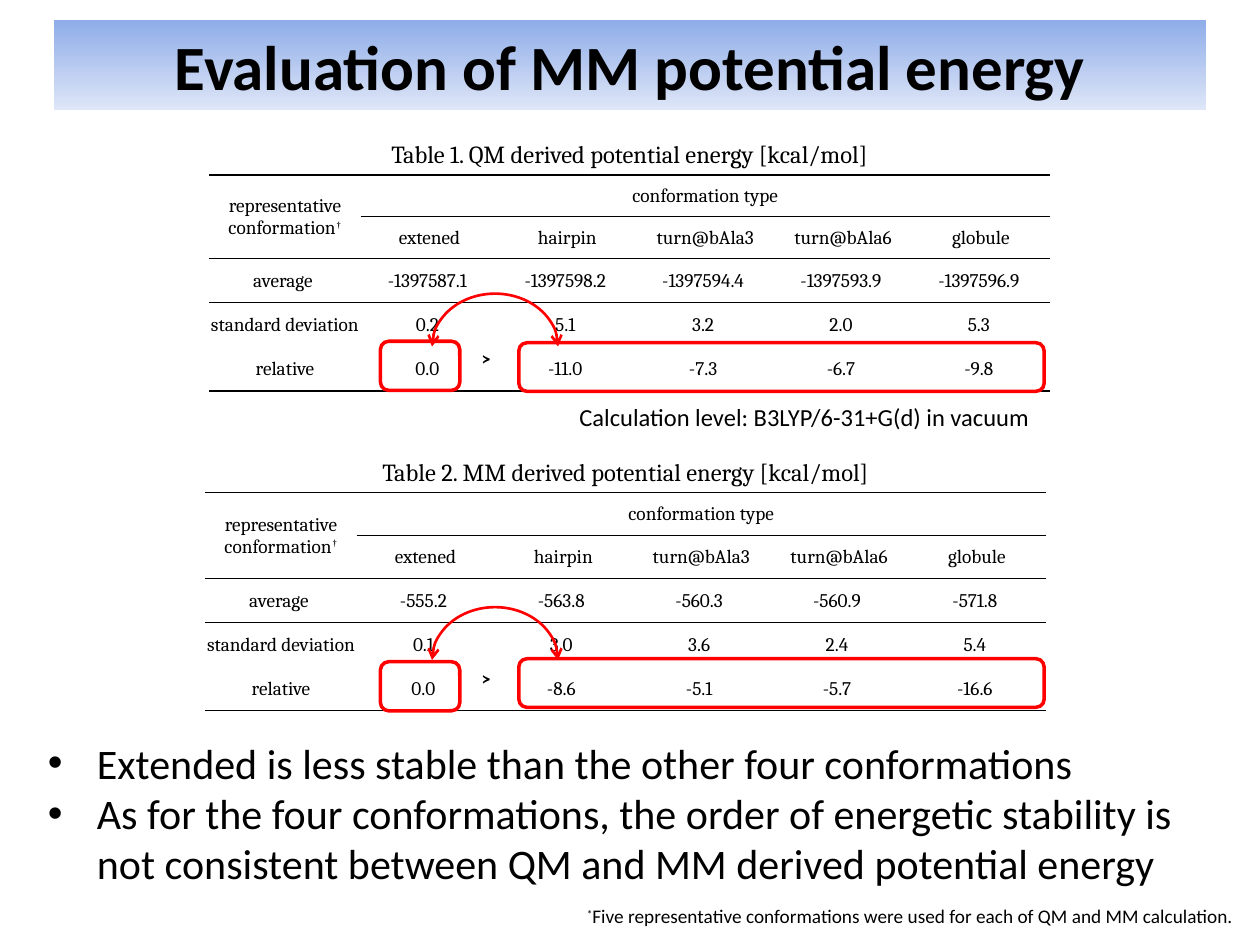
from dataclasses import dataclass

from lxml.etree import SubElement
from pptx import Presentation
from pptx.dml.color import RGBColor
from pptx.enum.shapes import MSO_SHAPE as Shape
from pptx.enum.text import MSO_ANCHOR as Anchor, MSO_AUTO_SIZE as AutoSize, PP_ALIGN as Align
from pptx.oxml.ns import qn
from pptx.util import Cm, Pt

COLORS = {"text": "000000", "accent": "FF0000", "band top": "8FADE9", "band bottom": "DEE6F7"}
NO_GRID_STYLE = "{2D5ABB26-0587-4C30-8999-92F81FD0307C}"
CONFORMATIONS = ["extened", "hairpin", "turn@bAla3", "turn@bAla6", "globule"]
ROW_LABELS = ["average ", "standard deviation", "relative"]
LABEL_WIDTH, VALUE_WIDTH = 3.05, 2.78
CAPTION_HEIGHT, VALUE_HEIGHT = 0.81, 0.89


@dataclass
class Box:
    """A frame on the page, in centimetres."""
    left: float
    top: float
    width: float
    height: float

    def lengths(self) -> tuple:
        return Cm(self.left), Cm(self.top), Cm(self.width), Cm(self.height)


@dataclass
class Span:
    text: str
    raised: bool = False


@dataclass
class EnergyTable:
    caption: str
    left: float
    top: float
    header_height: float
    values: list[list[str]]
    reference_top: float
    others_top: float
    sign_top: float
    arc_top: float


ENERGY_TABLES = [
    EnergyTable("Table 2. MM derived potential energy [kcal/mol]", 4.14, 9.12, 0.86, [
        ["-555.2", "-563.8", "-560.3", "-560.9", "-571.8"],
        ["0.1", "3.0", "3.6", "2.4", "5.4"],
        ["0.0", "-8.6", "-5.1", "-5.7", "-16.6"],
    ], reference_top=13.34, others_top=13.28, sign_top=13.36, arc_top=12.24),
    EnergyTable("Table 1. QM derived potential energy [kcal/mol]", 4.22, 2.72, 0.84, [
        ["-1397587.1", "-1397598.2", "-1397594.4", "-1397593.9", "-1397596.9"],
        ["0.2", "5.1", "3.2", "2.0", "5.3"],
        ["0.0", "-11.0", "-7.3", "-6.7", "-9.8"],
    ], reference_top=6.88, others_top=6.91, sign_top=6.91, arc_top=5.92),
]


def color(name: str) -> RGBColor:
    return RGBColor.from_string(COLORS[name])


def write(para, spans: list[Span], font: str, size: float, align=Align.LEFT, bold=False) -> None:
    para.text = spans[0].text
    for extra in spans[1:]:
        para.add_run().text = extra.text
    para.alignment = align
    for run, span in zip(para.runs, spans):
        run.font.name, run.font.size, run.font.bold = font, Pt(size), bold
        run.font.color.rgb = color("text")
        if span.raised:
            run.font._element.set("baseline", "30000")


def place(shape, box: Box) -> None:
    shape.left, shape.top, shape.width, shape.height = box.lengths()


def add_label(page, box: Box, spans: list[Span], font: str, size: float) -> None:
    frame = page.shapes.add_textbox(*box.lengths()).text_frame
    frame.word_wrap = False
    write(frame.paragraphs[0], spans, font, size)


def add_border(cell, side: str, width: float) -> None:
    line = SubElement(cell._tc.get_or_add_tcPr(), qn(f"a:ln{side}"), w=str(Pt(width)))
    fill = SubElement(line, qn("a:solidFill"))
    SubElement(fill, qn("a:srgbClr"), val=COLORS["text"])


def fill_cell(cell, spans: list[Span], size: float = 11) -> None:
    write(cell.text_frame.paragraphs[0], spans, "Cambria", size, Align.CENTER)


def add_energy_table(page, data: EnergyTable) -> None:
    heights = [CAPTION_HEIGHT] + [data.header_height] * 2 + [VALUE_HEIGHT] * 3
    widths = [LABEL_WIDTH] + [VALUE_WIDTH] * len(CONFORMATIONS)
    box = Box(data.left, data.top, sum(widths), sum(heights))
    graphic = page.shapes.add_table(len(heights), len(widths), *box.lengths())
    table = graphic.table
    table.first_row = table.horz_banding = False
    table._tbl.tblPr.find(qn("a:tableStyleId")).text = NO_GRID_STYLE
    for row, height in zip(table.rows, heights):
        row.height = Cm(height)
    for column, width in zip(table.columns, widths):
        column.width = Cm(width)

    # Rules between rows: (row, side) to width, the label column has no rule inside its header
    rules = {(0, "B"): 1, (1, "T"): 1, (1, "B"): 0.5, (2, "T"): 0.5,
             (2, "B"): 0.5, (3, "T"): 0.5, (5, "B"): 1}
    for row in range(len(heights)):
        for column in range(len(widths)):
            cell = table.cell(row, column)
            cell.margin_left = cell.margin_right = cell.margin_top = Cm(0.03)
            cell.margin_bottom = 0
            cell.vertical_anchor = Anchor.MIDDLE
            for side in "TB":
                inside_label = column == 0 and (row, side) in [(1, "B"), (2, "T")]
                if (row, side) in rules and not inside_label:
                    add_border(cell, side, rules[row, side])
            cell.fill.background()

    # Caption and header
    table.cell(0, 0).merge(table.cell(0, 5))
    table.cell(1, 0).merge(table.cell(2, 0))
    table.cell(1, 1).merge(table.cell(1, 5))
    add_border_below = table.cell(1, 0)
    add_border(add_border_below, "B", 0.5)
    properties = add_border_below._tc.tcPr
    properties.append(properties.find(qn("a:noFill")))
    fill_cell(table.cell(0, 0), [Span(data.caption)], 14)
    fill_cell(table.cell(1, 0), [Span("representative conformation"), Span("†", True)])
    fill_cell(table.cell(1, 1), [Span("conformation type")])
    for column, name in enumerate(CONFORMATIONS, 1):
        fill_cell(table.cell(2, column), [Span(name)])

    # Values
    for row, (label, values) in enumerate(zip(ROW_LABELS, data.values), 3):
        fill_cell(table.cell(row, 0), [Span(label)])
        for column, value in enumerate(values, 1):
            fill_cell(table.cell(row, column), [Span(f"{value} ")])


def add_outline(page, kind, box: Box, width: float):
    shape = page.shapes.add_shape(kind, *box.lengths())
    shape.shadow.inherit = False
    shape.fill.background()
    shape.line.color.rgb = color("accent")
    shape.line.width = Pt(width)
    return shape


def add_comparison(page, data: EnergyTable) -> None:
    add_outline(page, Shape.ROUNDED_RECTANGLE, Box(7.67, data.reference_top, 1.6, 0.99), 2)
    add_outline(page, Shape.ROUNDED_RECTANGLE, Box(10.46, data.others_top, 10.59, 0.98), 2)
    add_label(page, Box(9.47, data.sign_top, 0.86, 1.02), [Span("˃")], "Cambria", 18)
    arc = add_outline(page, Shape.ARC, Box(8.71, data.arc_top, 2.54, 2.13), 1.5)
    arc.adjustments[0], arc.adjustments[1] = 108, 0
    for end in ("headEnd", "tailEnd"):
        SubElement(arc.line._get_or_add_ln(), qn(f"a:{end}"), type="arrow")


def main() -> None:
    deck = Presentation()
    deck.slide_width, deck.slide_height = Cm(25.4), Cm(19.05)
    page = deck.slides.add_slide(deck.slide_layouts[1])
    title, body = page.placeholders

    # Title band
    place(title, Box(1.09, 0.41, 23.22, 1.8))
    title.text_frame.auto_size = AutoSize.NONE
    write(title.text_frame.paragraphs[0], [Span("Evaluation of MM potential energy")],
          "Calibri", 36, Align.CENTER, True)
    title.fill.gradient()
    title.fill.gradient_angle = 270
    for stop, name in zip(title.fill.gradient_stops, ("band top", "band bottom")):
        stop.color.rgb = color(name)

    # Tables and their marks
    for data in ENERGY_TABLES:
        add_energy_table(page, data)
    for data in ENERGY_TABLES:
        add_comparison(page, data)

    # Conclusions
    place(body, Box(0.71, 14.73, 24, 3.33))
    body.text_frame.auto_size = AutoSize.NONE
    body.text_frame.text = (
        "Extended is less stable than the other four conformations\n"
        "As for the four conformations, the order of energetic stability is "
        "not consistent between QM and MM derived potential energy")
    for para in body.text_frame.paragraphs:
        write(para, [Span(para.text)], "Calibri", 24)
        para.space_before = Pt(0)
        para._p.get_or_add_pPr().set("marL", str(Cm(0.99)))
        para._p.get_or_add_pPr().set("indent", str(-Cm(0.99)))

    # Notes on the calculation
    add_label(page, Box(11.43, 7.98, 9.68, 0.86),
              [Span("Calculation level: B3LYP/6-31+G(d) in vacuum")], "Calibri", 14)
    add_label(page, Box(11.58, 18.11, 13.59, 0.74), [Span("*", True), Span(
        "Five representative conformations were used for each of QM and MM calculation.")],
        "Calibri", 11)
    deck.save("out.pptx")


if __name__ == "__main__":
    main()
